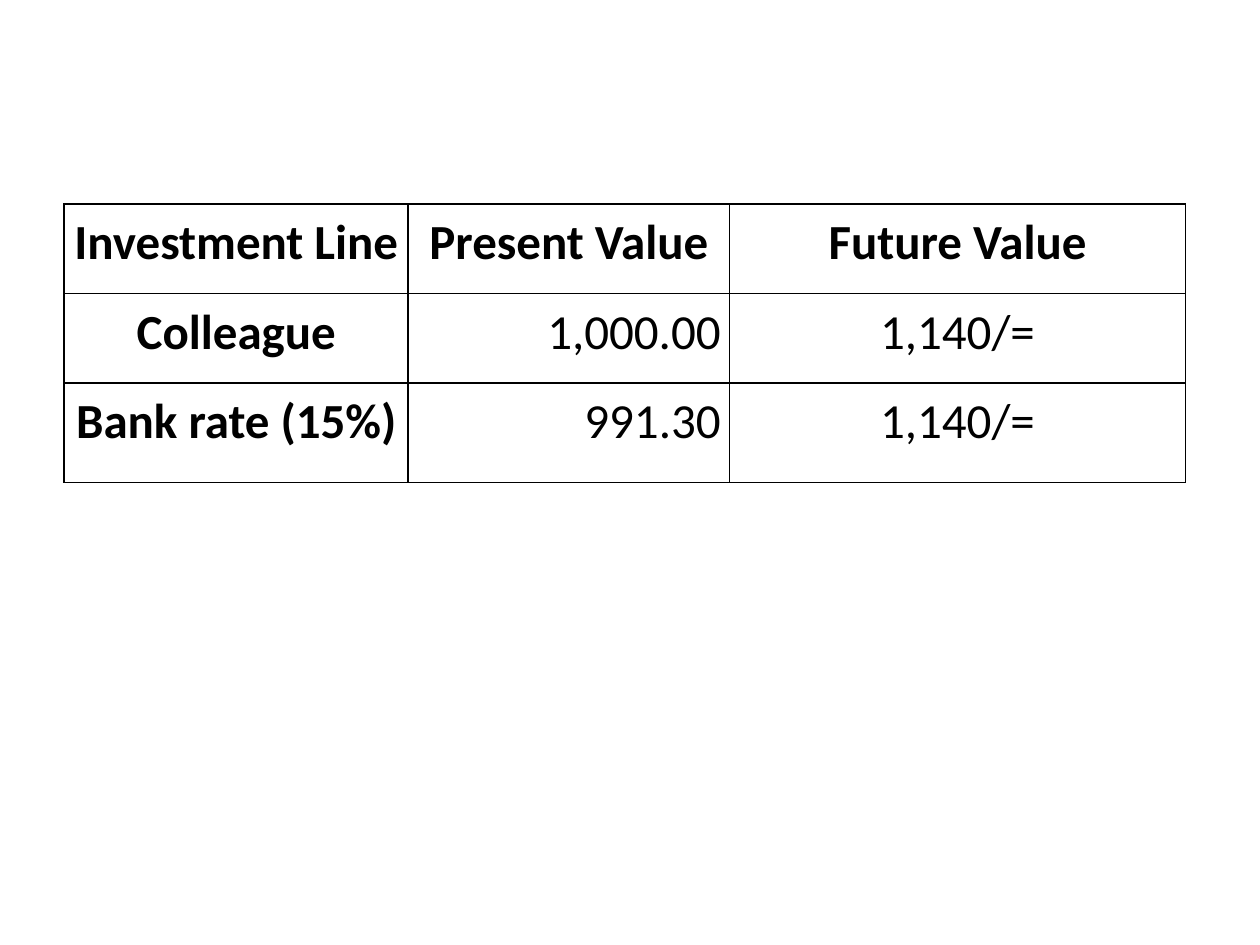
"""Build a slide with a table that compares two investment lines."""
from dataclasses import dataclass

from lxml import etree
from pptx import Presentation
from pptx.dml.color import RGBColor
from pptx.enum.text import PP_ALIGN
from pptx.oxml.ns import qn
from pptx.util import Inches, Pt

MID, RIGHT = PP_ALIGN.CENTER, PP_ALIGN.RIGHT

ROWS = [
    ("Investment Line", "Present Value", "Future Value"),
    ("Colleague", "1,000.00", "1,140/="),
    ("Bank rate (15%)", "991.30", "1,140/="),
]
WIDE, HIGH = 10, 7.5
LEFT, TOP = 0.51, 1.62
COLS = (2.73, 2.55, 3.62)
TALL = (0.71, 0.71, 0.79)
PAD = 0.07


@dataclass(frozen=True)
class Theme:
    font: str = "Calibri"
    size: int = 28
    lead: float = 1.15
    ink: str = "000000"
    paper: str = "FFFFFF"
    rule: int = 1


THEME = Theme()


def write(cell, text, bold=False, align=MID):
    para = cell.text_frame.paragraphs[0]
    para.alignment, para.line_spacing = align, THEME.lead
    run = para.add_run()
    run.text = text
    font = run.font
    font.name, font.size, font.bold = THEME.font, Pt(THEME.size), bold
    font.color.rgb = RGBColor.from_string(THEME.ink)


def frame(cell):
    props = cell._tc.get_or_add_tcPr()
    for side in ("lnL", "lnR", "lnT", "lnB"):
        line = etree.SubElement(props, qn(f"a:{side}"), w=str(Pt(THEME.rule)))
        fill = etree.SubElement(line, qn("a:solidFill"))
        etree.SubElement(fill, qn("a:srgbClr"), val=THEME.ink)


def style(cell):
    cell.margin_left = cell.margin_right = Inches(PAD)
    cell.margin_top = cell.margin_bottom = 0
    frame(cell)
    cell.fill.solid()
    cell.fill.fore_color.rgb = RGBColor.from_string(THEME.paper)


def main():
    deck = Presentation()
    deck.slide_width, deck.slide_height = Inches(WIDE), Inches(HIGH)
    slide = deck.slides.add_slide(deck.slide_layouts[6])
    box = [Inches(n) for n in (LEFT, TOP, sum(COLS), sum(TALL))]
    table = slide.shapes.add_table(len(ROWS), len(COLS), *box).table
    for col, width in zip(table.columns, COLS):
        col.width = Inches(width)
    for row, height in zip(table.rows, TALL):
        row.height = Inches(height)
    for r, row in enumerate(ROWS):
        for c, text in enumerate(row):
            cell = table.cell(r, c)
            style(cell)
            write(cell, text, bold=r == 0 or c == 0,
                  align=RIGHT if r and c == 1 else MID)
    deck.save("out.pptx")


if __name__ == "__main__":
    main()
